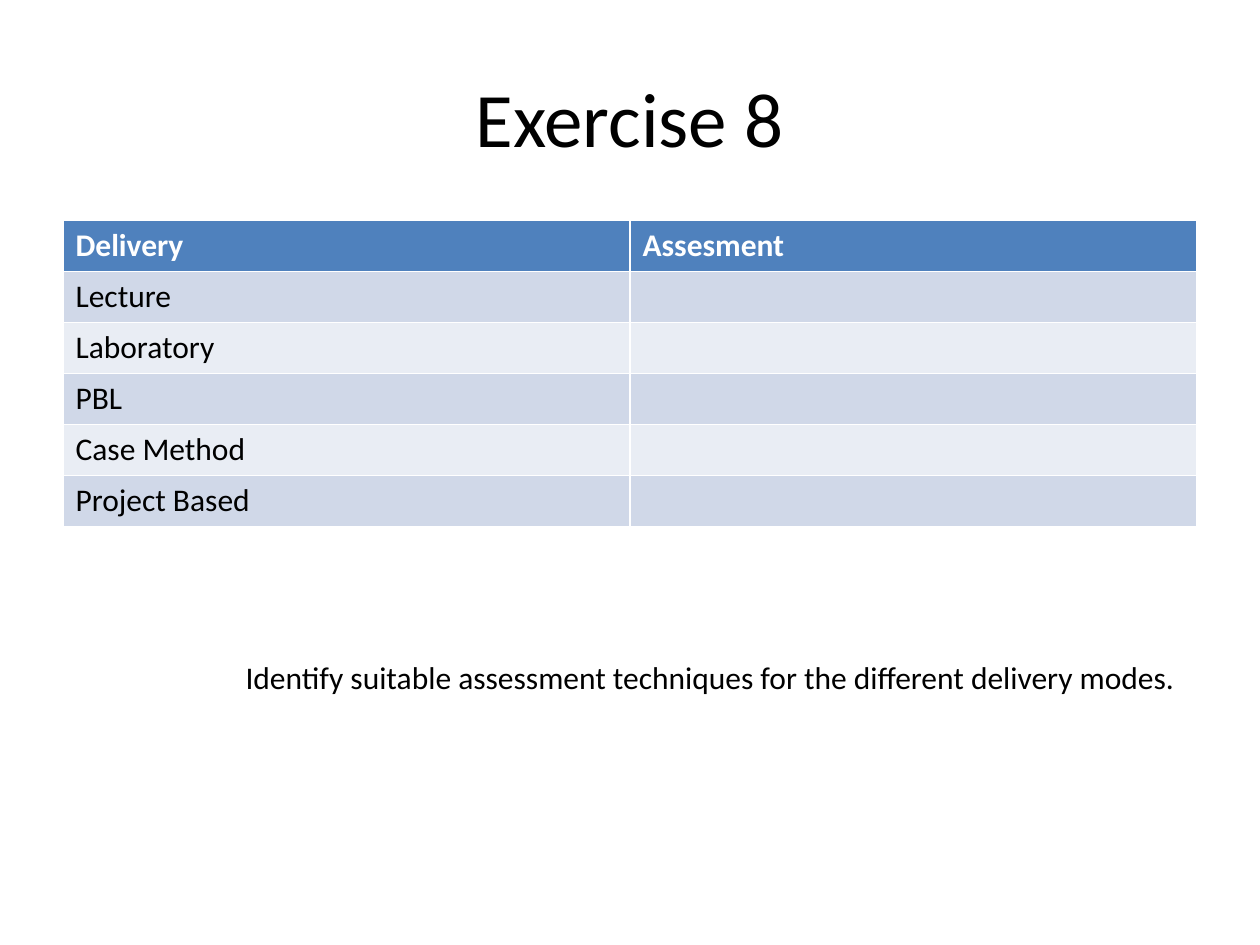
"""Build the Exercise 8 slide with a table of delivery modes and assessments."""
from pptx import Presentation
from pptx.dml.color import RGBColor
from pptx.enum.text import MSO_ANCHOR as Anchor, MSO_AUTO_SIZE as AutoSize, PP_ALIGN as Align
from pptx.util import Inches, Pt

COLORS = {
    "text": "000000",
    "header_text": "FFFFFF",
    "header": "4F81BD",
    "band_dark": "D0D8E8",
    "band_light": "E9EDF4",
}


def write(frame, text, size=18, color="text", bold=False, align=Align.LEFT):
    para = frame.paragraphs[0]
    para.alignment = align
    span = para.add_run()
    span.text = text
    span.font.name = "Calibri"
    span.font.size = Pt(size)
    span.font.bold = bold
    span.font.color.rgb = RGBColor.from_string(COLORS[color])


deck = Presentation()
deck.slide_width = Inches(10)
deck.slide_height = Inches(7.5)
page = deck.slides.add_slide(deck.slide_layouts[6])

title = page.shapes.add_textbox(Inches(0.5), Inches(0.3), Inches(9), Inches(1.25)).text_frame
title.word_wrap = True
title.vertical_anchor = Anchor.MIDDLE
write(title, "Exercise 8", size=44, align=Align.CENTER)

headings = ["Delivery", "Assesment"]
modes = ["Lecture", "Laboratory", "PBL", "Case Method", "Project Based"]
rows = [headings] + [[mode, ""] for mode in modes]
table = page.shapes.add_table(
    len(rows), len(headings), Inches(0.5), Inches(1.75), Inches(9), Inches(2.43)
).table

for row_index, texts in enumerate(rows):
    is_header = row_index == 0
    band = "band_dark" if row_index % 2 else "band_light"
    for column_index, text in enumerate(texts):
        cell = table.cell(row_index, column_index)
        cell.fill.solid()
        cell.fill.fore_color.rgb = RGBColor.from_string(COLORS["header" if is_header else band])
        if text:
            write(cell.text_frame, text, color="header_text" if is_header else "text", bold=is_header)

prompt = page.shapes.add_textbox(Inches(1.85), Inches(5.17), Inches(7.61), Inches(0.4)).text_frame
prompt.word_wrap = False
prompt.auto_size = AutoSize.SHAPE_TO_FIT_TEXT
write(prompt, "Identify suitable assessment techniques for the different delivery modes.")

deck.save("out.pptx")
